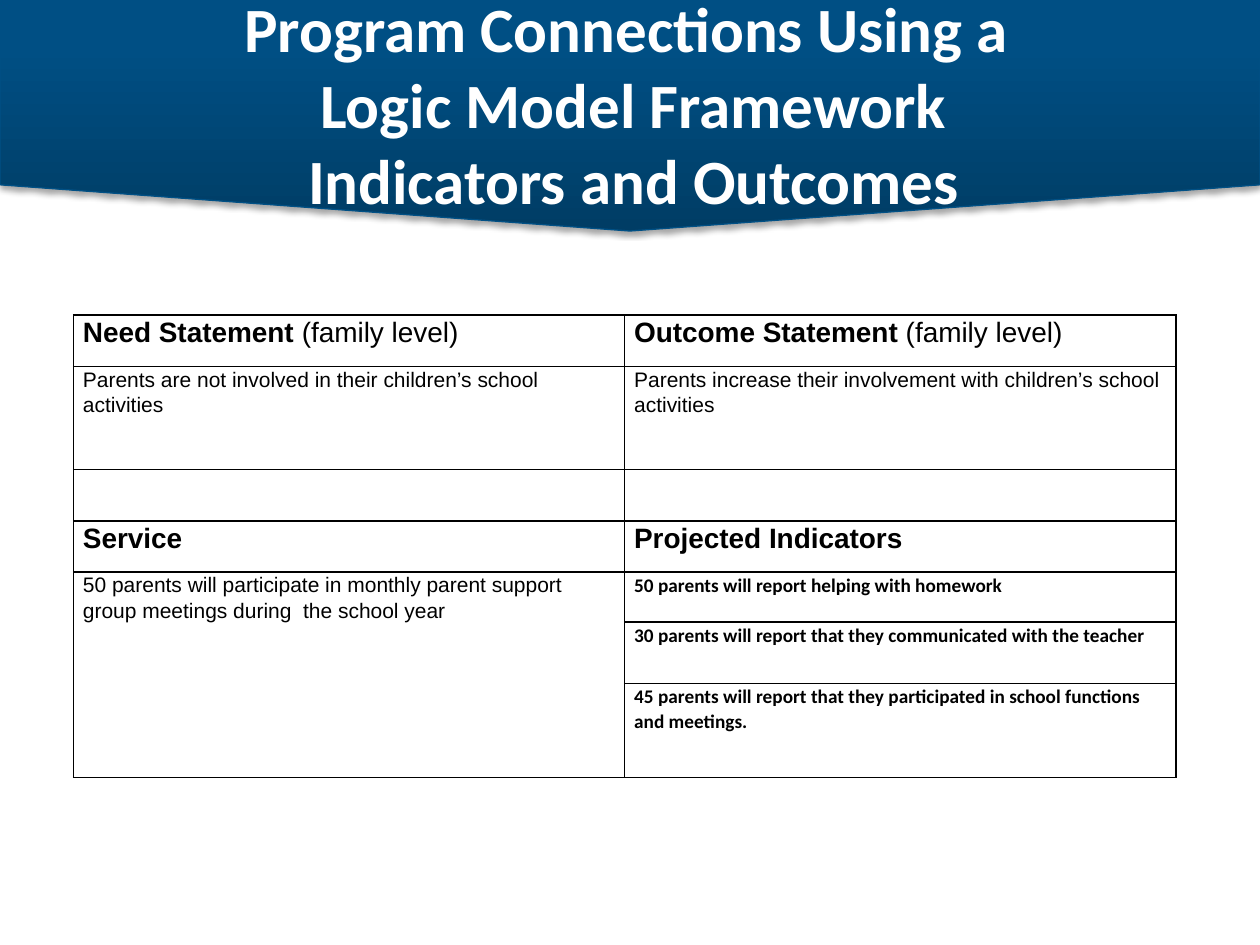
from copy import deepcopy

from lxml.etree import SubElement
from pptx import Presentation
from pptx.dml.color import RGBColor
from pptx.enum.shapes import MSO_SHAPE as Shape
from pptx.enum.text import MSO_ANCHOR as Anchor, PP_ALIGN as Align
from pptx.oxml import parse_xml
from pptx.oxml.ns import nsdecls, qn
from pptx.util import Pt

COLORS = {
    "deep": "003D65",
    "middle": "004F84",
    "bright": "005084",
    "edge": "005085",
    "title": "FFFFFF",
    "ink": "000000",
}
COLUMN_WIDTH = 315
ROW_HEIGHTS = [29.4, 58.8, 29.4, 29.4, 28.4, 35.2, 53.8]
TITLE_LINES = [
    "Program Connections Using a ",
    "Logic Model Framework",
    "Indicators and Outcomes",
]
HEADING = ("Arial", 16, True)
HEADING_NOTE = ("Arial", 16, False)
BODY = ("Arial", 12, False)
INDICATOR = ("Calibri", 11, True)
CELLS = {
    (0, 0): [("Need Statement ", HEADING), ("(family level)", HEADING_NOTE)],
    (0, 1): [("Outcome Statement", HEADING), (" (family level)", HEADING_NOTE)],
    (1, 0): [("Parents are not involved in their children’s school activities", BODY)],
    (1, 1): [("Parents increase their involvement with children’s school activities", BODY)],
    (3, 0): [("Service", HEADING)],
    (3, 1): [("Projected Indicators", HEADING)],
    (4, 0): [("50 parents will participate in monthly parent support group meetings during  the school year", BODY)],
    (4, 1): [("50 parents will report helping with homework", INDICATOR)],
    (5, 1): [("30 parents will report that they communicated with the teacher", INDICATOR)],
    (6, 1): [("45 parents will report that they participated in school functions and meetings.", INDICATOR)],
}


class SlideBuilder:
    def __init__(self, deck):
        self.page = deck.slides.add_slide(deck.slide_layouts[6])

    def color(self, name):
        return RGBColor.from_string(COLORS[name])

    def span(self, para, text, style, color):
        span = para.add_run()
        span.text = text
        span.font.name, size, span.font.bold = style
        span.font.size = Pt(size)
        span.font.color.rgb = self.color(color)

    def banner(self, left, top, width, height):
        shape = self.page.shapes.add_shape(
            Shape.FLOWCHART_OFFPAGE_CONNECTOR, Pt(left), Pt(top), Pt(width), Pt(height))
        shape.fill.gradient()
        shape.fill.gradient_angle = 90
        first = shape.fill._fill._gradFill.gsLst[0]
        first.addnext(deepcopy(first))
        stops = zip(shape.fill.gradient_stops, (0, 0.8, 1), ("deep", "middle", "bright"))
        for stop, position, name in stops:
            stop.position = position
            stop.color.rgb = self.color(name)
        shape.line.color.rgb = self.color("edge")
        shape.line.width = Pt(0.75)
        shape.shadow.inherit = False
        effects = shape._element.spPr.find(qn("a:effectLst"))
        shadow = SubElement(effects, qn("a:outerShdw"), blurRad=str(Pt(3.1)),
                            dist=str(Pt(1.8)), dir="5400000", rotWithShape="0")
        tint = SubElement(shadow, qn("a:srgbClr"), val=COLORS["ink"])
        SubElement(tint, qn("a:alpha"), val="35000")

    def title(self, lines, left, top, width, height):
        box = self.page.shapes.add_textbox(Pt(left), Pt(top), Pt(width), Pt(height))
        frame = box.text_frame
        frame.word_wrap = True
        frame.vertical_anchor = Anchor.MIDDLE
        para = frame.paragraphs[0]
        para.alignment = Align.CENTER
        for index, line in enumerate(lines):
            if index:
                para.add_line_break()
            self.span(para, line, ("Calibri", 36, True), "title")

    def border(self, cell):
        properties = cell._tc.get_or_add_tcPr()
        for index, side in enumerate(("lnL", "lnR", "lnT", "lnB")):
            properties.insert(index, parse_xml(
                f'<a:{side} {nsdecls("a")} w="{Pt(1)}"><a:solidFill>'
                f'<a:srgbClr val="{COLORS["ink"]}"/></a:solidFill></a:{side}>'))

    def table(self, cells, left, top):
        table = self.page.shapes.add_table(
            len(ROW_HEIGHTS), 2, Pt(left), Pt(top),
            Pt(2 * COLUMN_WIDTH), Pt(sum(ROW_HEIGHTS))).table
        table.first_row = table.horz_banding = False
        for column in table.columns:
            column.width = Pt(COLUMN_WIDTH)
        for row, height in zip(table.rows, ROW_HEIGHTS):
            row.height = Pt(height)
        table.cell(4, 0).merge(table.cell(6, 0))
        for cell in table.iter_cells():
            cell.fill.background()
            cell.margin_left = cell.margin_right = Pt(5.4)
            cell.margin_top = cell.margin_bottom = Pt(0)
            self.border(cell)
        for (row, column), spans in cells.items():
            para = table.cell(row, column).text_frame.paragraphs[0]
            para.line_spacing = 1.07
            for text, style in spans:
                self.span(para, text, style, "ink")
        table.cell(6, 1).text_frame.paragraphs[0].space_after = Pt(8)


def main():
    deck = Presentation()
    deck.slide_width, deck.slide_height = Pt(720), Pt(540)
    builder = SlideBuilder(deck)
    builder.banner(0, 0, 720, 132)
    builder.title(TITLE_LINES, 38, 14, 648, 90)
    builder.table(CELLS, 42, 180)
    deck.save("out.pptx")


if __name__ == "__main__":
    main()
